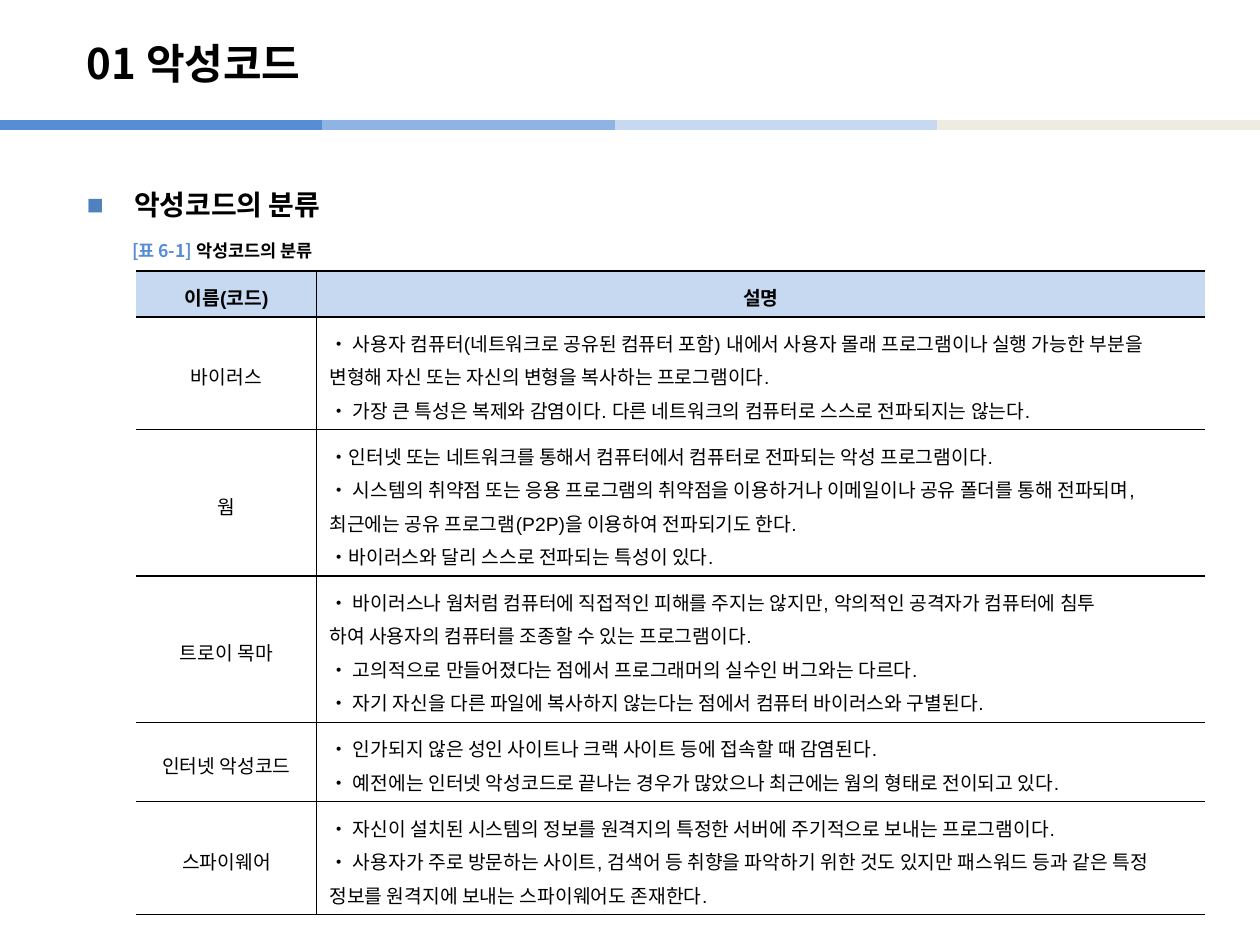
import pptx
import pptx.dml.color
import pptx.enum.shapes
import pptx.enum.text
import pptx.oxml.ns
import pptx.util
from lxml import etree

Pt = pptx.util.Pt
ALIGN = pptx.enum.text.PP_ALIGN
ANCHOR = pptx.enum.text.MSO_ANCHOR
BLACK = "000000"
LINE_HEIGHT = 19.1
ROWS = [
    ("바이러스", 3, [
        "• 사용자 컴퓨터(네트워크로 공유된 컴퓨터 포함) 내에서 사용자 몰래 프로그램이나 실행 가능한 부분을 변형해 자신 또는 자신의 변형을 복사하는 프로그램이다.",
        "• 가장 큰 특성은 복제와 감염이다. 다른 네트워크의 컴퓨터로 스스로 전파되지는 않는다."]),
    ("웜", 4, [
        "•인터넷 또는 네트워크를 통해서 컴퓨터에서 컴퓨터로 전파되는 악성 프로그램이다.",
        "• 시스템의 취약점 또는 응용 프로그램의 취약점을 이용하거나 이메일이나 공유 폴더를 통해 전파되며, 최근에는 공유 프로그램(P2P)을 이용하여 전파되기도 한다.",
        "•바이러스와 달리 스스로 전파되는 특성이 있다."]),
    ("트로이 목마", 4, [
        "• 바이러스나 웜처럼 컴퓨터에 직접적인 피해를 주지는 않지만, 악의적인 공격자가 컴퓨터에 침투",
        "하여 사용자의 컴퓨터를 조종할 수 있는 프로그램이다.",
        "• 고의적으로 만들어졌다는 점에서 프로그래머의 실수인 버그와는 다르다.",
        "• 자기 자신을 다른 파일에 복사하지 않는다는 점에서 컴퓨터 바이러스와 구별된다."]),
    ("인터넷 악성코드", 2, [
        "• 인가되지 않은 성인 사이트나 크랙 사이트 등에 접속할 때 감염된다.",
        "• 예전에는 인터넷 악성코드로 끝나는 경우가 많았으나 최근에는 웜의 형태로 전이되고 있다."]),
    ("스파이웨어", 3, [
        "• 자신이 설치된 시스템의 정보를 원격지의 특정한 서버에 주기적으로 보내는 프로그램이다.",
        "• 사용자가 주로 방문하는 사이트, 검색어 등 취향을 파악하기 위한 것도 있지만 패스워드 등과 같은 특정 정보를 원격지에 보내는 스파이웨어도 존재한다."]),
]


def color(value):
    """Return the colour of a hex string."""
    return pptx.dml.color.RGBColor.from_string(value)


def add_element(parent, tag, **attributes):
    """Append an XML element such as a:ln and return it."""
    return etree.SubElement(parent, pptx.oxml.ns.qn(tag), attributes)


def format_font(font, size, name="Arial", bold=True, fill=BLACK):
    """Set the look of a font."""
    font.size, font.name, font.bold = Pt(size), name, bold
    font.color.rgb = color(fill)


def add_bar(slide, left, right, fill):
    """Draw one coloured segment of the rule below the title."""
    bar = slide.shapes.add_connector(
        pptx.enum.shapes.MSO_CONNECTOR.STRAIGHT, Pt(left), Pt(71.3), Pt(right), Pt(71.3))
    bar.line.color.rgb = color(fill)
    bar.line.width = Pt(6)
    add_element(bar._element.spPr, "a:effectLst")


def add_title(slide, text):
    """Place and fill the title."""
    title = slide.shapes.title
    title.left, title.top, title.width, title.height = Pt(42.5), Pt(14.4), Pt(595.5), Pt(43.2)
    frame = title.text_frame
    frame.text = text
    frame.vertical_anchor = ANCHOR.MIDDLE
    frame.paragraphs[0].alignment = ALIGN.LEFT
    format_font(frame.paragraphs[0].font, 24, "Noto Sans CJK KR")


def add_heading(slide, text):
    """Add the section heading with its square bullet."""
    frame = slide.shapes.add_textbox(Pt(42.5), Pt(94.3), Pt(646.5), Pt(36)).text_frame
    frame.word_wrap = True
    paragraph = frame.paragraphs[0]
    paragraph.text = text
    paragraph.line_spacing = 1.5
    properties = paragraph._p.get_or_add_pPr()
    properties.set("marL", str(Pt(27)))
    properties.set("indent", str(Pt(-27)))
    add_element(add_element(properties, "a:buClr"), "a:srgbClr", val="4F81BD")
    add_element(properties, "a:buFont", typeface="Arial")
    add_element(properties, "a:buChar", char="■")
    format_font(paragraph.font, 16)


def add_caption(slide, label, text):
    """Add the table caption with a coloured label."""
    frame = slide.shapes.add_textbox(Pt(68.4), Pt(131.8), Pt(150.5), Pt(22.3)).text_frame
    frame.word_wrap = False
    frame.vertical_anchor = ANCHOR.MIDDLE
    for words, fill in ((label, "558ED5"), (text, BLACK)):
        run = frame.paragraphs[0].add_run()
        run.text = words
        format_font(run.font, 10, "Noto Sans CJK KR", fill=fill)


def set_borders(cell, open_side):
    """Draw thin black borders on all sides of a cell but one."""
    properties = cell._tc.get_or_add_tcPr()
    for side in "LRTB":
        line = add_element(properties, "a:ln" + side, w=str(Pt(1)))
        if side == open_side:
            add_element(line, "a:noFill")
        else:
            add_element(add_element(line, "a:solidFill"), "a:srgbClr", val=BLACK)


def fill_cell(cell, lines, open_side, centered, header=False):
    """Write and format one table cell."""
    set_borders(cell, open_side)
    cell.fill.solid()
    cell.fill.fore_color.rgb = color("C6D9F1" if header else "FFFFFF")
    cell.vertical_anchor = ANCHOR.TOP if header else ANCHOR.MIDDLE
    cell.text = "\n".join(lines)
    for paragraph in cell.text_frame.paragraphs:
        paragraph.alignment = ALIGN.CENTER if centered else ALIGN.LEFT
        paragraph.line_spacing = 1.2
        format_font(paragraph.font, 11, bold=header)


def add_malware_table(slide):
    """Add the table of malware kinds and their descriptions."""
    rows = [("이름(코드)", 1, ["설명"])] + ROWS
    heights = [7.2 + LINE_HEIGHT * count for name, count, lines in rows]
    table = slide.shapes.add_table(
        len(rows), 2, Pt(77.8), Pt(154.8), Pt(610.8), Pt(sum(heights))).table
    table.horz_banding = False
    table.columns[0].width, table.columns[1].width = Pt(103.2), Pt(507.6)
    for index, (name, count, lines) in enumerate(rows):
        header = index == 0
        table.rows[index].height = Pt(heights[index])
        fill_cell(table.cell(index, 0), [name], "L", True, header)
        fill_cell(table.cell(index, 1), lines, "R", header, header)


def main():
    """Build the slide and save it."""
    presentation = pptx.Presentation()
    presentation.slide_width, presentation.slide_height = Pt(720), Pt(540)
    slide = presentation.slides.add_slide(presentation.slide_layouts[5])
    for left, right, fill in ((167, 351.4, "8EB4E3"), (351.4, 535.7, "C6D9F1"),
                              (535.7, 720, "EEECE1"), (0, 184.3, "558ED5")):
        add_bar(slide, left, right, fill)
    add_title(slide, "01 악성코드")
    add_heading(slide, "악성코드의 분류")
    add_malware_table(slide)
    add_caption(slide, "[표 6-1] ", "악성코드의 분류")
    presentation.save("out.pptx")


if __name__ == "__main__":
    main()
